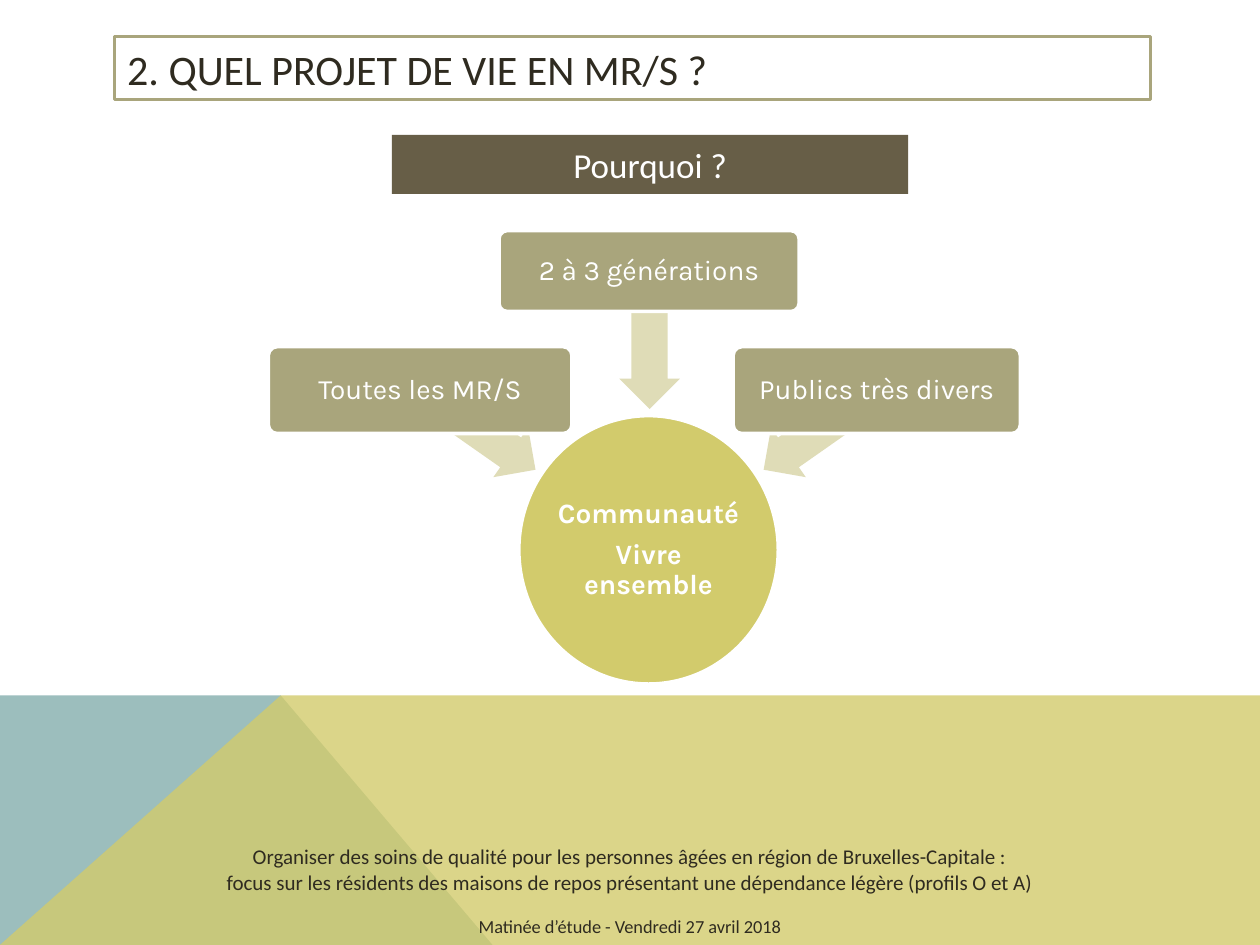
import pptx
import pptx.util
import pptx.dml.color
import pptx.enum.shapes
import pptx.enum.text
import pptx.oxml
import pptx.oxml.ns

Cm = pptx.util.Cm
Pt = pptx.util.Pt
Shape = pptx.enum.shapes.MSO_SHAPE
Align = pptx.enum.text.PP_ALIGN
Anchor = pptx.enum.text.MSO_ANCHOR

COLORS = {
    "white": "FFFFFF", "ink": "2F2B20", "brown": "675E47", "olive": "A9A57C",
    "arrow": "DFDCB7", "lime": "D2CB6C", "teal": "9CBEBD",
}
WIDTH, HEIGHT = 25.4, 19.05
BAND_TOP, PEAK, FOOT = 14.02, 5.66, 9.93

TITLE = "2. QUEL PROJET DE VIE EN MR/S ?"
QUESTION = "Pourquoi ?"
CENTRE = ["Communauté", "Vivre ensemble"]
CAUSES = [
    {"text": "Toutes les MR/S", "box": (5.41, 6.99, 6.12, 1.75),
     "arrow": (8.23, 8.05, 2.82, 1.22), "turn": 215},
    {"text": "2 à 3 générations", "box": (10.06, 4.65, 6.05, 1.63),
     "arrow": (11.71, 6.25, 2.77, 1.22), "turn": 270},
    {"text": "Publics très divers", "box": (14.78, 6.99, 5.79, 1.75),
     "arrow": (15.14, 8.05, 2.82, 1.22), "turn": 325},
]
EVENT = [
    "Organiser des soins de qualité pour les personnes âgées en région de Bruxelles-Capitale :",
    "focus sur les résidents des maisons de repos présentant une dépendance légère (profils O et A)",
]
DATE = "Matinée d’étude - Vendredi 27 avril 2018"
BANDS = [
    ("teal", 100, [(0, HEIGHT), (0, BAND_TOP), (PEAK, BAND_TOP), (FOOT, HEIGHT)]),
    ("lime", 80, [(0, HEIGHT), (PEAK, BAND_TOP), (WIDTH, BAND_TOP), (WIDTH, HEIGHT)]),
]


def rgb(name):
    return pptx.dml.color.RGBColor.from_string(COLORS[name])


def place(box, area):
    box.left, box.top, box.width, box.height = map(Cm, area)


def paint(box, fill, line=None):
    box.fill.solid()
    box.fill.fore_color.rgb = rgb(fill)
    if line:
        box.line.color.rgb = rgb(line)
        box.line.width = Pt(2)
    else:
        box.line.fill.background()


def write(box, lines, size=16, font="Karla", color="white", bold=False,
          align=Align.CENTER, anchor=Anchor.MIDDLE, inset=None, spacing=0.9, after=6):
    frame = box.text_frame
    frame.word_wrap = True
    frame.auto_size = pptx.enum.text.MSO_AUTO_SIZE.NONE
    frame.vertical_anchor = anchor
    if inset is not None:
        frame.margin_left = frame.margin_right = Cm(inset)
        frame.margin_top = frame.margin_bottom = Cm(inset)
    for index, text in enumerate(lines):
        para = frame.add_paragraph() if index else frame.paragraphs[0]
        para.alignment = align
        para.line_spacing = spacing
        para.space_before = Pt(0)
        para.space_after = Pt(after if index < len(lines) - 1 else 0)
        span = para.add_run()
        span.text = text
        span.font.size = Pt(size)
        span.font.name = font
        span.font.bold = bold
        span.font.color.rgb = rgb(color)
    return frame


def add_shape(page, kind, area, fill, line=None):
    box = page.shapes.add_shape(kind, *map(Cm, area))
    box.shadow.inherit = False
    paint(box, fill, line)
    return box


def add_band(page, color, opacity, points):
    corners = [(Cm(x), Cm(y)) for x, y in points]
    builder = page.shapes.build_freeform(*corners[0])
    builder.add_line_segments(corners[1:], close=True)
    band = builder.convert_to_shape()
    band.shadow.inherit = False
    paint(band, color)
    if opacity < 100:
        tint = band.fill._xPr.find(".//" + pptx.oxml.ns.qn("a:srgbClr"))
        tint.append(pptx.oxml.parse_xml(
            f'<a:alpha {pptx.oxml.ns.nsdecls("a")} val="{opacity * 1000}"/>'))


def add_heading(page):
    title, body = page.shapes.title, page.placeholders[1]
    place(title, (2.31, 0.74, 20.88, 1.27))
    paint(title, "white", "olive")
    write(title, [TITLE], size=24, font="Calibri", color="ink", align=Align.LEFT, spacing=1)
    place(body, (7.9, 2.72, 10.41, 1.19))
    paint(body, "brown")
    frame = write(body, [QUESTION], size=20, font="Calibri", spacing=1)
    layout = frame.paragraphs[0]._p.get_or_add_pPr()
    layout.set("marL", "0")
    layout.set("indent", "0")
    layout.append(pptx.oxml.parse_xml(f'<a:buNone {pptx.oxml.ns.nsdecls("a")}/>'))


def add_diagram(page):
    circle = add_shape(page, Shape.OVAL, (10.46, 8.38, 5.23, 5.41), "lime", "white")
    write(circle, CENTRE, bold=True, inset=0)
    for cause in CAUSES:
        arrow = add_shape(page, Shape.LEFT_ARROW, cause["arrow"], "arrow")
        arrow.adjustments[0], arrow.adjustments[1] = 0.6, 0.5
        arrow.rotation = cause["turn"]
        box = add_shape(page, Shape.ROUNDED_RECTANGLE, cause["box"], "olive", "white")
        box.adjustments[0] = 0.1
        write(box, [cause["text"]], inset=0.08)


def add_footer(page):
    box = page.shapes.add_textbox(Cm(0), Cm(16.89), Cm(WIDTH), Cm(2.16))
    frame = write(box, EVENT + [DATE], size=12, font="Calibri", color="ink",
                  anchor=Anchor.TOP, spacing=1, after=0)
    date = frame.paragraphs[-1]
    date.space_before = Pt(12)
    date.runs[0].font.size = Pt(10.5)


def main():
    deck = pptx.Presentation()
    deck.slide_width, deck.slide_height = Cm(WIDTH), Cm(HEIGHT)
    page = deck.slides.add_slide(deck.slide_layouts[1])
    for color, opacity, points in BANDS:
        add_band(page, color, opacity, points)
    add_heading(page)
    add_footer(page)
    add_diagram(page)
    deck.save("out.pptx")


if __name__ == "__main__":
    main()
